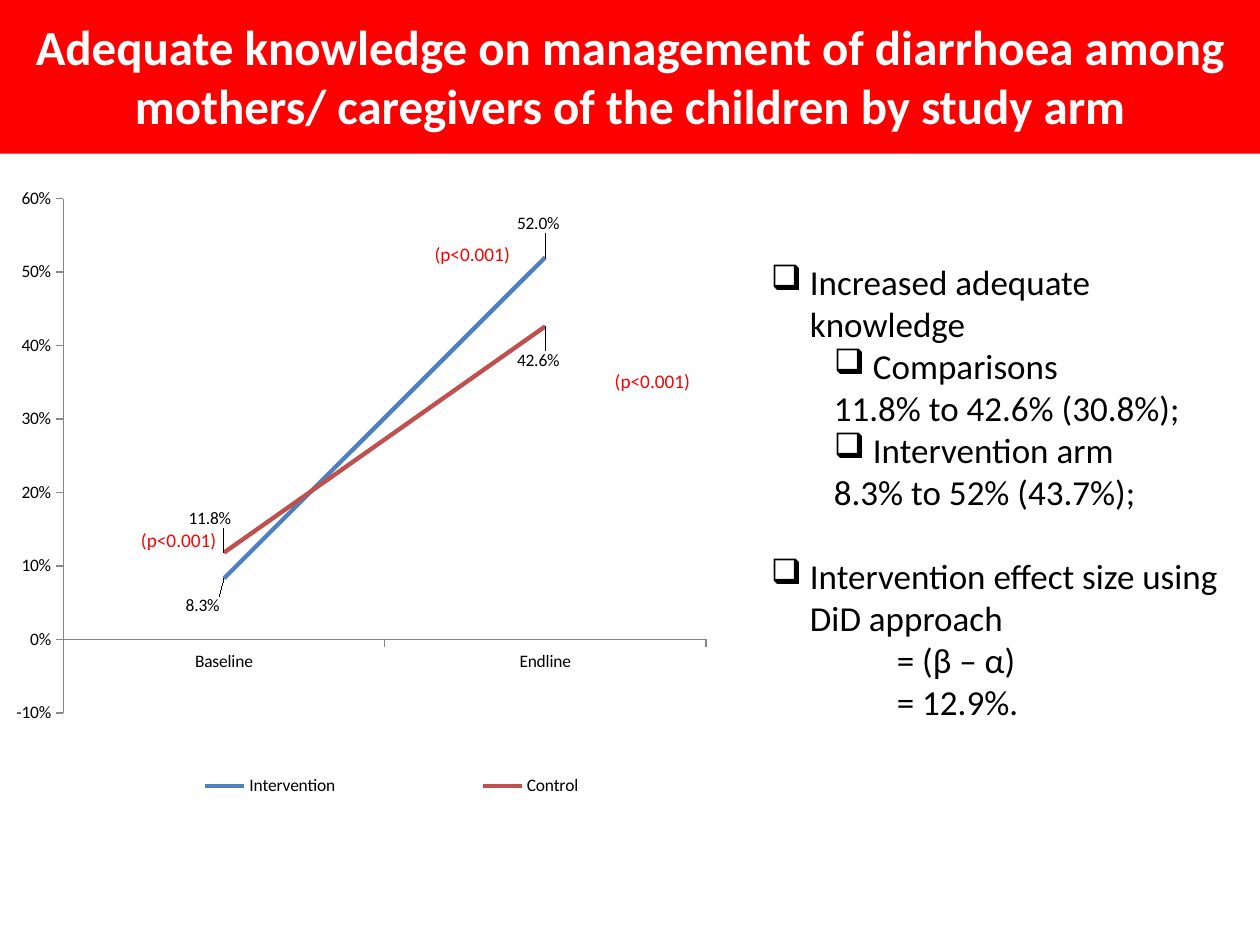
from typing import NamedTuple

from lxml.etree import SubElement
from pptx import Presentation
from pptx.chart.data import CategoryChartData
from pptx.dml.color import RGBColor
from pptx.enum.chart import XL_CHART_TYPE, XL_LABEL_POSITION, XL_LEGEND_POSITION, XL_TICK_MARK
from pptx.enum.shapes import MSO_SHAPE
from pptx.enum.text import MSO_ANCHOR, PP_ALIGN
from pptx.oxml.ns import qn
from pptx.util import Inches, Pt

COLUMNS, ROWS = 100, 75
CELL = Inches(0.1)
FONT = "Calibri"
BLACK, WHITE, RED, AXIS_GRAY = "000000", "FFFFFF", "FF0000", "868686"


class Area(NamedTuple):
    left: float
    top: float
    width: float
    height: float


class Line(NamedTuple):
    text: str
    margin: float = 0
    hanging: float = 0
    bullet: str = ""
    space_before: float = 0


class Label(NamedTuple):
    position: XL_LABEL_POSITION
    shift_x: float
    shift_y: float


class Arm(NamedTuple):
    name: str
    color: str
    values: tuple
    labels: tuple


TITLE = Line("Adequate knowledge on management of diarrhoea among "
             "mothers/ caregivers of the children by study arm")
FINDINGS = (
    Line("Increased adequate knowledge", 3.1, 3.1, "❑"),
    Line("Comparisons", 8.1, 3.1, "❑"),
    Line("11.8% to 42.6% (30.8%);", 5),
    Line("Intervention arm", 8.1, 3.1, "❑"),
    Line("8.3% to 52% (43.7%);", 5),
    Line("Intervention effect size using DiD approach", 3.1, 3.1, "❑", 24),
    Line("= (β – α)", 10),
    Line("= 12.9%.", 10),
)
ABOVE, BELOW = XL_LABEL_POSITION.ABOVE, XL_LABEL_POSITION.BELOW
ARMS = (
    Arm("Intervention", "4F81BD", (0.083, 0.52),
        (Label(BELOW, -0.03, 0.02), Label(ABOVE, -0.01, -0.03))),
    Arm("Control", "C0504D", (0.118, 0.426),
        (Label(ABOVE, -0.02, -0.03), Label(BELOW, -0.01, 0.03))),
)
P_VALUE_CORNERS = ((47.8, 28.8), (10.2, 41.4), (33.5, 18.7))


def rgb(color: str) -> RGBColor:
    """Turn a hex string into a colour."""
    return RGBColor.from_string(color)


def cells(count: float) -> int:
    """Turn a number of grid cells into a length."""
    return round(count * CELL)


def place(area: Area) -> list:
    """Turn a grid area into left, top, width and height."""
    return [cells(count) for count in area]


def write(shape, lines, *, size, color=BLACK, bold=False, align=PP_ALIGN.LEFT,
          anchor=MSO_ANCHOR.TOP, wrap=True) -> None:
    """Write formatted lines into a shape."""
    frame = shape.text_frame
    frame.word_wrap = wrap
    frame.vertical_anchor = anchor
    for index, line in enumerate(lines):
        paragraph = frame.add_paragraph() if index else frame.paragraphs[0]
        paragraph.alignment = align
        paragraph.space_before = Pt(line.space_before)
        run = paragraph.add_run()
        run.text = line.text
        run.font.name, run.font.size, run.font.bold = FONT, Pt(size), bold
        run.font.color.rgb = rgb(color)
        properties = paragraph._p.get_or_add_pPr()
        properties.set("marL", str(cells(line.margin)))
        properties.set("indent", str(-cells(line.hanging)))
        if line.bullet:
            SubElement(properties, qn("a:buChar"), char=line.bullet)


def add_text(slide, area: Area, lines, **style) -> None:
    """Add a text box with formatted lines."""
    write(slide.shapes.add_textbox(*place(area)), lines, **style)


def add_title(slide) -> None:
    """Add the title band."""
    band = slide.shapes.add_shape(MSO_SHAPE.RECTANGLE, *place(Area(0, -0.3, COLUMNS, 12.5)))
    band.shadow.inherit = False
    band.fill.solid()
    band.fill.fore_color.rgb = rgb(RED)
    band.line.fill.background()
    write(band, [TITLE], size=28, color=WHITE, bold=True,
          align=PP_ALIGN.CENTER, anchor=MSO_ANCHOR.MIDDLE)


def set_layout(element, index: int, **settings) -> None:
    """Give a chart element a manual layout at a child index."""
    for old in element.findall(qn("c:layout")):
        element.remove(old)
    layout = SubElement(element, qn("c:layout"))
    manual = SubElement(layout, qn("c:manualLayout"))
    for name, value in settings.items():
        SubElement(manual, qn(f"c:{name}"), val=str(value))
    element.insert(index, layout)


def style_axis(axis) -> None:
    """Format a chart axis."""
    axis.has_major_gridlines = False
    axis.major_tick_mark = XL_TICK_MARK.OUTSIDE
    axis.minor_tick_mark = XL_TICK_MARK.NONE
    axis.format.line.color.rgb = rgb(AXIS_GRAY)
    axis.format.line.width = Pt(0.75)


def add_knowledge_chart(slide) -> None:
    """Add the line chart of both study arms."""
    data = CategoryChartData(number_format="0.0%")
    data.categories = ["Baseline", "Endline"]
    for arm in ARMS:
        data.add_series(arm.name, arm.values)
    chart = slide.shapes.add_chart(
        XL_CHART_TYPE.LINE, *place(Area(1.3, 14, 57, 50.4)), data).chart
    chart.has_title = False
    chart.font.name, chart.font.size = FONT, Pt(10)
    chart.font.color.rgb = rgb(BLACK)
    chart.has_legend = True
    chart.legend.position = XL_LEGEND_POSITION.BOTTOM
    chart.legend.include_in_layout = False
    style_axis(chart.category_axis)
    style_axis(chart.value_axis)
    value_axis = chart.value_axis
    value_axis.minimum_scale, value_axis.maximum_scale = -0.1, 0.6
    value_axis.major_unit = 0.1
    value_axis.tick_labels.number_format = "0%"
    value_axis.tick_labels.number_format_is_linked = False

    for arm, series in zip(ARMS, chart.plots[0].series):
        series.smooth = False
        series.format.line.color.rgb = rgb(arm.color)
        series.format.line.width = Pt(2.5)
        series.data_labels.show_value = True
        series.data_labels.number_format = "0.0%"
        series.data_labels.number_format_is_linked = False
        for index, label in enumerate(arm.labels):
            series.points[index].data_label.position = label.position

    labels = [label for arm in ARMS for label in arm.labels]
    for element, label in zip(chart.element.xpath(".//c:dLbl"), labels):
        set_layout(element, 1, x=label.shift_x, y=label.shift_y)
    set_layout(chart.element.xpath(".//c:plotArea")[0], 0, layoutTarget="inner",
               xMode="edge", yMode="edge", x=0.06, y=0.035, w=0.9, h=0.81)
    set_layout(chart.element.xpath(".//c:legend")[0], 1,
               xMode="edge", yMode="edge", x=0.06, y=0.92, w=0.92, h=0.08)


def main() -> None:
    """Build and save the slide."""
    presentation = Presentation()
    presentation.slide_width, presentation.slide_height = cells(COLUMNS), cells(ROWS)
    slide = presentation.slides.add_slide(presentation.slide_layouts[6])
    add_title(slide)
    add_text(slide, Area(60.2, 20.2, 38.6, 38), FINDINGS, size=20)
    add_knowledge_chart(slide)
    for left, top in P_VALUE_CORNERS:
        add_text(slide, Area(left, top, 8.1, 2.9), [Line("(p<0.001)")],
                 size=11, color=RED, wrap=False)
    presentation.save("out.pptx")


if __name__ == "__main__":
    main()
